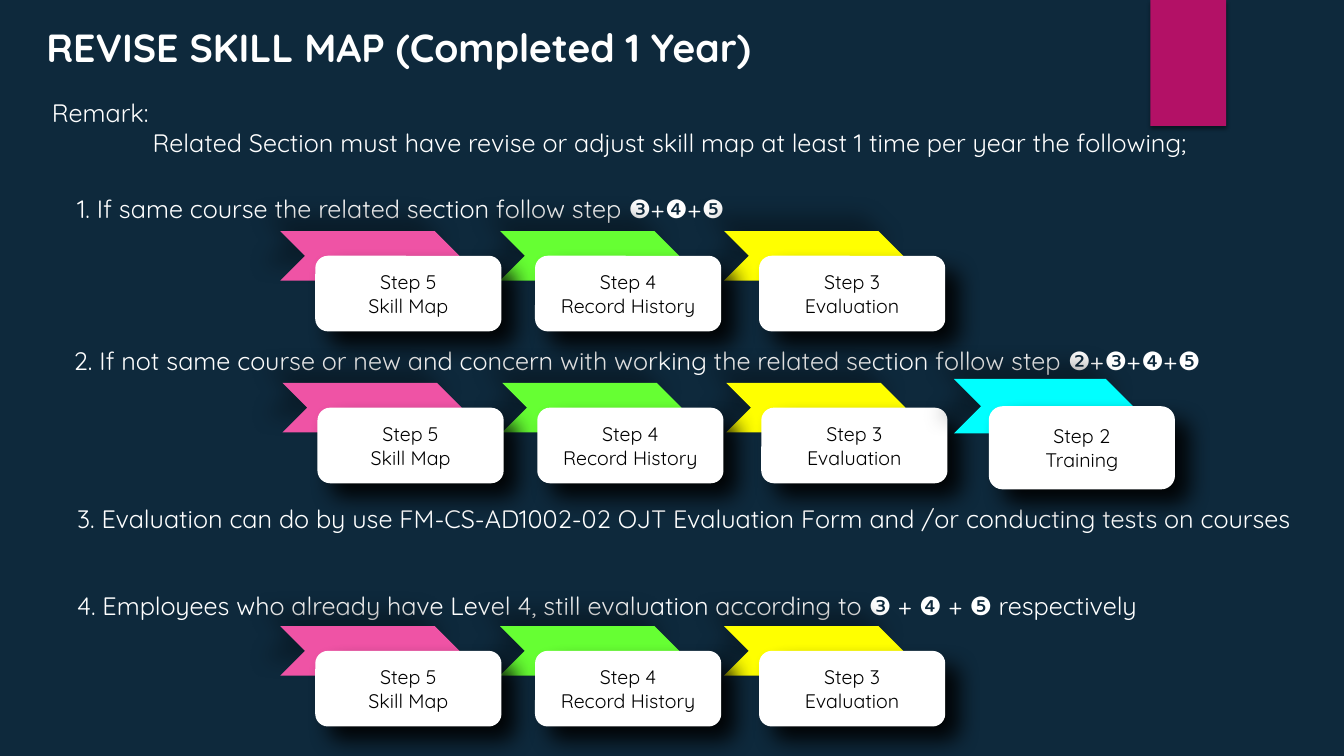
from lxml import etree
from pptx import Presentation
from pptx.dml.color import RGBColor
from pptx.enum.shapes import MSO_SHAPE
from pptx.enum.text import MSO_ANCHOR, PP_ALIGN
from pptx.oxml.ns import qn
from pptx.util import Pt

RECTANGLE = MSO_SHAPE.RECTANGLE
CHEVRON = MSO_SHAPE.CHEVRON
ROUNDED = MSO_SHAPE.ROUNDED_RECTANGLE
MIDDLE = MSO_ANCHOR.MIDDLE
CENTER = PP_ALIGN.CENTER

FONT = "Quicksand"
NAVY, MAGENTA, WHITE, BLACK = "0E293C", "B31166", "FFFFFF", "000000"

TAB_SHADOW = (45, 3, 2, 90)
FLAG_SHADOW = (31, 15, 16, 225)
CARD_SHADOW = (92, 16, 14, 45)

STEP_3 = (317, "FFFF00", "Step 3", "Evaluation")
STEP_4 = (157, "66FF33", "Step 4", "Record History")
STEP_5 = (0, "EF53A5", "Step 5", "Skill Map")
STEP_2 = (479.5, "00FFFF", "Step 2", "Training")

REMARKS = [
    (48, 124, "1. If same course the related section follow step ❸+❹+❺"),
    (45.5, 232.5, "2. If not same course or new and concern with working the related "
                  "section follow step ❷+❸+❹+❺"),
    (48, 345, "3. Evaluation can do by use FM-CS-AD1002-02 OJT Evaluation Form "
              "and /or conducting tests on courses"),
    (48, 407.5, "4. Employees who already have Level 4, still evaluation "
                "according to ❸ + ❹ + ❺ respectively"),
]


def color(value):
    return RGBColor.from_string(value)


def set_font(para, size, value, bold=False):
    para.font.name = FONT
    para.font.size = Pt(size)
    para.font.bold = bold
    para.font.color.rgb = color(value)


def add_shadow(shape, opacity, blur, distance, angle):
    shape.shadow.inherit = False
    effects = shape._element.spPr.find(qn("a:effectLst"))
    shadow = etree.SubElement(
        effects, qn("a:outerShdw"), blurRad=str(Pt(blur)), dist=str(Pt(distance)),
        dir=str(angle * 60000), algn="ctr", rotWithShape="0")
    tint = etree.SubElement(shadow, qn("a:srgbClr"), val=BLACK)
    etree.SubElement(tint, qn("a:alpha"), val=str(opacity * 1000))


def add_block(shapes, kind, left, top, width, height, fill, shadow):
    block = shapes.add_shape(kind, Pt(left), Pt(top), Pt(width), Pt(height))
    block.fill.solid()
    block.fill.fore_color.rgb = color(fill)
    block.line.fill.background()
    add_shadow(block, *shadow)
    return block


def add_text(page, left, top, width, height, lines, size=18, bold=False, spacing=None):
    box = page.shapes.add_textbox(Pt(left), Pt(top), Pt(width), Pt(height))
    frame = box.text_frame
    frame.word_wrap = True
    frame.text = "\n".join(lines)
    for para in frame.paragraphs:
        para.line_spacing = spacing
        set_font(para, size, WHITE, bold)
    return frame


def add_heading(page, left, top):
    add_text(page, left, top, 827, 41, ["REVISE SKILL MAP (Completed 1 Year)"], 28, True)
    frame = add_text(page, left + 4, top + 53, 897, 51, [
        "Remark:",
        "Related Section must have revise or adjust skill map at least 1 time "
        "per year the following;"])
    frame.paragraphs[1]._p.get_or_add_pPr().set("marL", str(Pt(72)))


def add_step(page, left, top, fill, lines, scale=1):
    shapes = page.shapes.add_group_shape().shapes
    add_block(shapes, CHEVRON, left, top, 128, 35.4 * scale, fill, FLAG_SHADOW)
    card = add_block(shapes, ROUNDED, left + 25, top + 17.7 * scale, 133, 54 * scale,
                     WHITE, CARD_SHADOW)
    frame = card.text_frame
    frame.word_wrap = True
    frame.vertical_anchor = MIDDLE
    frame.text = "\n".join(lines)
    for para in frame.paragraphs:
        para.alignment = CENTER
        set_font(para, 14, BLACK)


def add_step_row(page, left, top):
    for offset, fill, *lines in (STEP_3, STEP_4, STEP_5):
        add_step(page, left + offset, top, fill, lines)


def main():
    deck = Presentation()
    deck.slide_width, deck.slide_height = Pt(960), Pt(540)
    page = deck.slides.add_slide(deck.slide_layouts[6])
    page.background.fill.solid()
    page.background.fill.fore_color.rgb = color(NAVY)

    add_block(page.shapes, RECTANGLE, 821.8, 0, 54, 90, MAGENTA, TAB_SHADOW)
    add_heading(page, 26, 13)
    for left, top, remark in REMARKS:
        add_text(page, left, top, 897, 36, [remark], spacing=1.5)

    add_step_row(page, 200.2, 165)
    add_step_row(page, 201.8, 273.5)
    offset, fill, *lines = STEP_2
    add_step(page, 201.8 + offset, 270.7, fill, lines, 1.1)
    add_step_row(page, 200.2, 447.2)

    deck.save("out.pptx")


if __name__ == "__main__":
    main()
